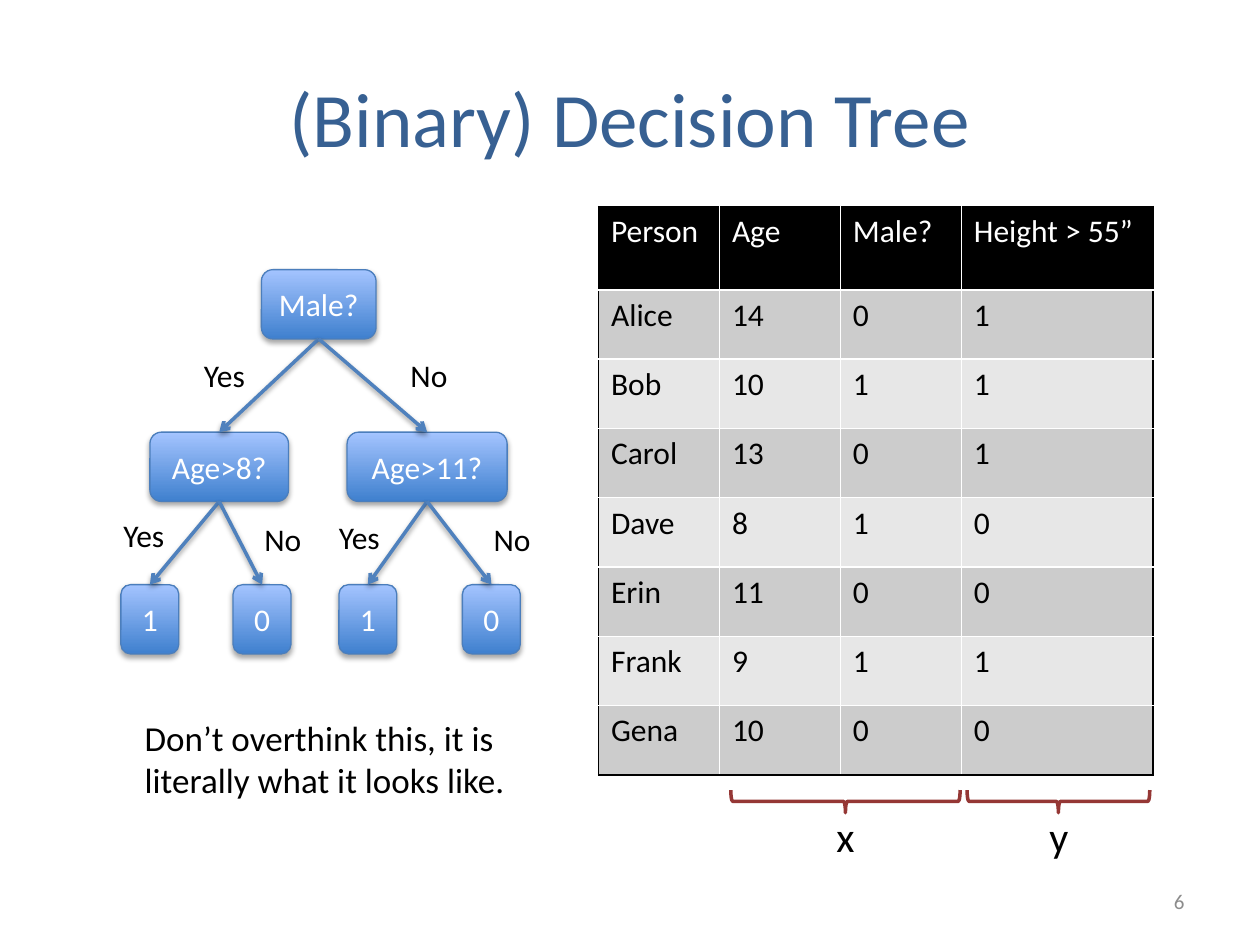
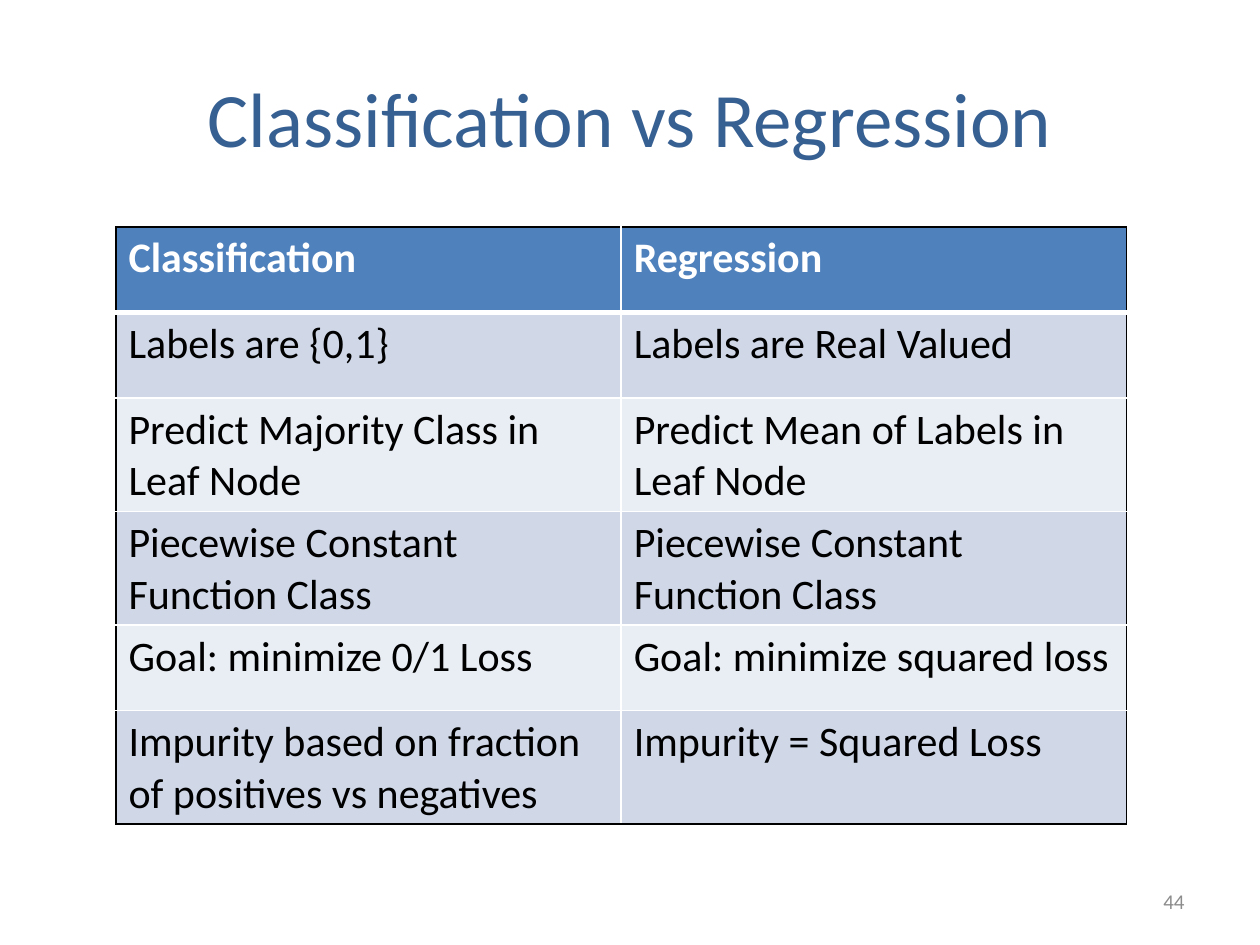
from pptx import Presentation
from pptx.dml.color import RGBColor
from pptx.enum.shapes import MSO_CONNECTOR, MSO_SHAPE
from pptx.enum.text import MSO_ANCHOR, PP_ALIGN
from pptx.oxml.ns import qn
from pptx.util import Inches, Pt
from lxml.etree import SubElement

FONT = "Calibri"
COLORS = {
    "title": "376092", "text": "000000", "white": "FFFFFF", "number": "8C8C8C",
    "node_low": "3F80CE", "node_high": "A4C4FF", "node_line": "4B7EBC",
    "accent": "4F81BD", "brace": "953735",
    "gray_dark": "CCCCCC", "gray_light": "E7E7E7",
    "blue_dark": "D0D8E8", "blue_light": "E9EDF4",
}

PEOPLE = [
    ("Person", "Age", "Male?", "Height > 55”"),
    ("Alice", "14", "0", "1"),
    ("Bob", "10", "1", "1"),
    ("Carol", "13", "0", "1"),
    ("Dave", "8", "1", "0"),
    ("Erin", "11", "0", "0"),
    ("Frank", "9", "1", "1"),
    ("Gena", "10", "0", "0"),
]
COMPARISON = [
    ("Classification", "Regression"),
    ("Labels are {0,1}", "Labels are Real Valued"),
    ("Predict Majority Class in Leaf Node", "Predict Mean of Labels in Leaf Node"),
    ("Piecewise Constant Function Class", "Piecewise Constant Function Class"),
    ("Goal: minimize 0/1 Loss", "Goal: minimize squared loss"),
    ("Impurity based on fraction of positives vs negatives",
     "Impurity = Squared Loss"),
]
REMARK = ["Don’t overthink this, it is", "literally what it looks like."]

# Tree: key -> (text, centre x, level, width)
NODE_HEIGHT = 0.55
LEVEL_TOPS = [2.14, 3.43, 4.64]
LEAF_WIDTH = 0.46
NODES = {
    "root": ("Male?", 2.53, 0, 0.91),
    "male": ("Age>8?", 1.74, 1, 1.1),
    "female": ("Age>11?", 3.39, 1, 1.27),
    "male_yes": ("1", 1.19, 2, LEAF_WIDTH),
    "male_no": ("0", 2.08, 2, LEAF_WIDTH),
    "female_yes": ("1", 2.92, 2, LEAF_WIDTH),
    "female_no": ("0", 3.9, 2, LEAF_WIDTH),
}
# Parent, child, answer, left and top of the answer
BRANCHES = [
    ("root", "male", "Yes", 1.52, 2.78),
    ("root", "female", "No", 3.16, 2.78),
    ("male", "male_yes", "Yes", 0.88, 4.05),
    ("male", "male_no", "No", 2, 4.08),
    ("female", "female_yes", "Yes", 2.59, 4.06),
    ("female", "female_no", "No", 3.82, 4.08),
]
ANSWER_WIDTHS = {"Yes": 0.55, "No": 0.5}
# Letter, centre x, brace length
BRACES = [("x", 6.71, 1.82), ("y", 8.4, 1.45)]
BRACE_DEPTH, BRACE_MIDDLE = 0.18, 6.36


def rgb(name):
    return RGBColor.from_string(COLORS[name])


def write(tf, lines, size, color="text", align=PP_ALIGN.LEFT, bold=False):
    for i, line in enumerate(lines):
        p = tf.paragraphs[0] if i == 0 else tf.add_paragraph()
        p.alignment = align
        r = p.add_run()
        r.text = line
        r.font.name, r.font.size, r.font.bold = FONT, Pt(size), bold
        r.font.color.rgb = rgb(color)


def add_text(s, box, lines, size, wrap=False, anchor=MSO_ANCHOR.TOP, **style):
    tf = s.shapes.add_textbox(*map(Inches, box)).text_frame
    tf.word_wrap = wrap
    tf.vertical_anchor = anchor
    write(tf, lines, size, **style)


def add_slide(prs, title, number):
    s = prs.slides.add_slide(prs.slide_layouts[5])
    sp = s.shapes.title
    sp.left, sp.top, sp.width, sp.height = map(Inches, (0.5, 0.3, 9, 1.25))
    sp.text_frame.vertical_anchor = MSO_ANCHOR.MIDDLE
    write(sp.text_frame, [title], 44, "title", PP_ALIGN.CENTER)
    add_text(s, (7.17, 6.95, 2.33, 0.4), [number], 12, wrap=True,
             anchor=MSO_ANCHOR.MIDDLE, color="number", align=PP_ALIGN.RIGHT)
    return s


def add_shadow(sp, opacity, distance):
    effects = SubElement(sp._element.spPr, qn("a:effectLst"))
    shadow = SubElement(effects, qn("a:outerShdw"), blurRad=str(Pt(3.1)),
                        dist=str(Pt(distance)), dir="5400000", rotWithShape="0")
    color = SubElement(shadow, qn("a:srgbClr"), val=COLORS["text"])
    SubElement(color, qn("a:alpha"), val=str(opacity * 1000))


def set_border(cell, side, color, width):
    ln = SubElement(cell._tc.get_or_add_tcPr(), qn("a:ln" + side), w=str(Pt(width)))
    fill = SubElement(ln, qn("a:solidFill"))
    SubElement(fill, qn("a:srgbClr"), val=COLORS[color])


def add_grid(s, left, top, widths, heights, rows, size, fills, bold_head, head_rule):
    """Table with a black frame, white inner rules and fills (head, odd, even)."""
    last_row, last_col = len(rows) - 1, len(widths) - 1
    table = s.shapes.add_table(
        len(rows), len(widths), Inches(left), Inches(top),
        Inches(sum(widths)), Inches(sum(heights))).table
    for col, width in zip(table.columns, widths):
        col.width = Inches(width)
    for i, (row, height) in enumerate(zip(rows, heights)):
        table.rows[i].height = Inches(height)
        for j, text in enumerate(row):
            cell = table.cell(i, j)
            outer = {"L": j == 0, "R": j == last_col, "T": i == 0, "B": i == last_row}
            for side, is_outer in outer.items():
                at_head = (i, side) in ((0, "B"), (1, "T"))
                set_border(cell, side, "text" if is_outer else "white",
                           head_rule if at_head else 1)
            cell.fill.solid()
            cell.fill.fore_color.rgb = rgb(fills[0 if i == 0 else 2 - i % 2])
            write(cell.text_frame, [text], size, "text" if i else "white",
                  bold=bold_head and i == 0)


def add_node(s, text, center, level, width):
    sp = s.shapes.add_shape(
        MSO_SHAPE.ROUNDED_RECTANGLE, Inches(center - width / 2),
        Inches(LEVEL_TOPS[level]), Inches(width), Inches(NODE_HEIGHT))
    sp.fill.gradient()
    sp.fill.gradient_angle = 90
    for stop, color in zip(sp.fill.gradient_stops, ("node_low", "node_high")):
        stop.color.rgb = rgb(color)
    sp.line.color.rgb = rgb("node_line")
    sp.line.width = Pt(0.75)
    add_shadow(sp, 35, 1.8)
    tf = sp.text_frame
    tf.word_wrap = False
    tf.vertical_anchor = MSO_ANCHOR.MIDDLE
    write(tf, [text], 18, "white", PP_ALIGN.CENTER)
    return sp


def add_arrow(s, parent, child):
    line = s.shapes.add_connector(MSO_CONNECTOR.STRAIGHT, 0, 0, 0, 0)
    line.begin_connect(parent, 2)
    line.end_connect(child, 0)
    line.line.color.rgb = rgb("accent")
    line.line.width = Pt(2)
    SubElement(line._element.spPr.find(qn("a:ln")), qn("a:tailEnd"), type="arrow")
    add_shadow(line, 38, 1.6)


def add_brace(s, letter, center, length):
    sp = s.shapes.add_shape(
        MSO_SHAPE.LEFT_BRACE, Inches(center - BRACE_DEPTH / 2),
        Inches(BRACE_MIDDLE - length / 2), Inches(BRACE_DEPTH), Inches(length))
    sp.rotation = 270
    sp.shadow.inherit = False
    sp.fill.background()
    sp.line.color.rgb = rgb("brace")
    sp.line.width = Pt(2)
    add_text(s, (center - 0.17, 6.38, 0.35, 0.5), [letter], 24)


def decision_tree(prs):
    s = add_slide(prs, "(Binary) Decision Tree", "6")
    add_grid(s, 4.75, 1.64, [0.96] * 3 + [1.52], [0.66] + [0.55] * 7, PEOPLE, 18,
             ("text", "gray_dark", "gray_light"), bold_head=False, head_rule=1)
    nodes = {key: add_node(s, *node) for key, node in NODES.items()}
    for parent, child, answer, left, top in BRANCHES:
        add_arrow(s, nodes[parent], nodes[child])
        add_text(s, (left, top, ANSWER_WIDTHS[answer], 0.4), [answer], 18)
    for brace in BRACES:
        add_brace(s, *brace)
    add_text(s, (1.05, 5.64, 3.1, 0.77), REMARK, 20)


def comparison(prs):
    s = add_slide(prs, "Classification vs Regression", "44")
    add_grid(s, 0.92, 1.8, [4.01] * 2, [0.68] * 6, COMPARISON, 24,
             ("accent", "blue_dark", "blue_light"), bold_head=True, head_rule=3)


def main():
    prs = Presentation()
    prs.slide_width, prs.slide_height = Inches(10), Inches(7.5)
    decision_tree(prs)
    comparison(prs)
    prs.save("out.pptx")


if __name__ == "__main__":
    main()
